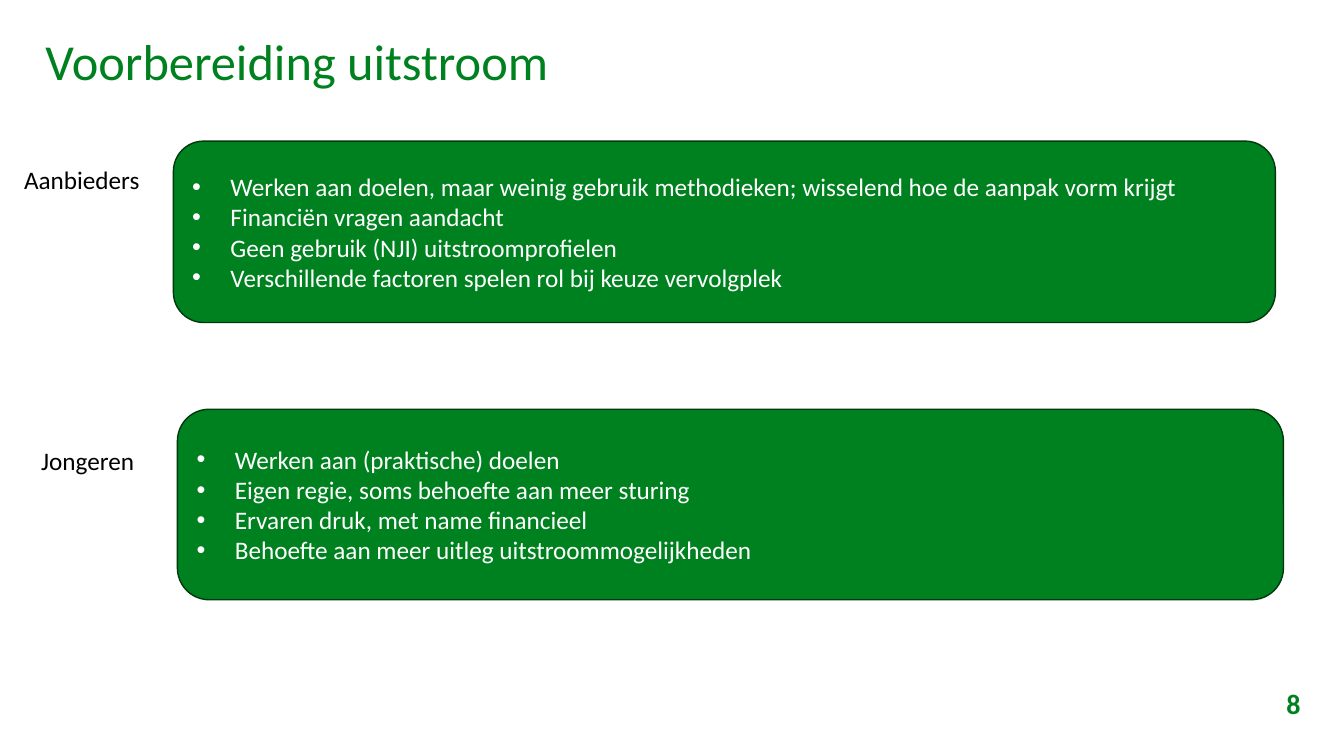
"""Build the slide on preparing young people for leaving care."""
from dataclasses import dataclass

from lxml.etree import SubElement
from pptx import Presentation
from pptx.dml.color import RGBColor
from pptx.enum.shapes import MSO_SHAPE
from pptx.enum.text import MSO_ANCHOR as Anchor, PP_ALIGN as Align
from pptx.oxml.ns import qn
from pptx.slide import Slide
from pptx.text.text import TextFrame, _Paragraph as Paragraph
from pptx.util import Inches, Pt


@dataclass(frozen=True)
class Theme:
    """Colours, font and type sizes of the slide."""
    font: str = "Calibri"
    green: RGBColor = RGBColor(0x00, 0x81, 0x1F)
    outline: RGBColor = RGBColor(0x00, 0x39, 0x0E)
    white: RGBColor = RGBColor(0xFF, 0xFF, 0xFF)
    black: RGBColor = RGBColor(0x00, 0x00, 0x00)
    title_size: int = 36
    number_size: int = 20
    body_size: int = 18


@dataclass(frozen=True)
class Box:
    """Position and size in inches."""
    left: float
    top: float
    width: float
    height: float

    def lengths(self) -> tuple[Inches, ...]:
        """Return the four values as lengths."""
        return tuple(Inches(value) for value in
                     (self.left, self.top, self.width, self.height))


@dataclass(frozen=True)
class Group:
    """A label with its panel of bulleted findings."""
    label: str
    label_box: Box
    panel_box: Box
    findings: tuple[str, ...]


THEME = Theme()
BULLET_INDENT = 0.38
GROUPS = (
    Group("Aanbieders", Box(0.14, 1.58, 1.57, 0.4), Box(1.72, 1.4, 10.93, 1.8), (
        "Werken aan doelen, maar weinig gebruik methodieken; wisselend hoe de aanpak vorm krijgt",
        "Financiën vragen aandacht",
        "Geen gebruik (NJI) uitstroomprofielen",
        "Verschillende factoren spelen rol bij keuze vervolgplek",
    )),
    Group("Jongeren", Box(0.31, 4.37, 1.36, 0.4), Box(1.76, 4.06, 10.97, 1.89), (
        "Werken aan (praktische) doelen",
        "Eigen regie, soms behoefte aan meer sturing",
        "Ervaren druk, met name financieel",
        "Behoefte aan meer uitleg uitstroommogelijkheden",
    )),
)


def add_run(paragraph: Paragraph, text: str, size: int, color: RGBColor,
            bold: bool = False) -> None:
    """Add one formatted run to a paragraph."""
    run = paragraph.add_run()
    run.text = text
    run.font.name = THEME.font
    run.font.size = Pt(size)
    run.font.bold = bold
    run.font.color.rgb = color


def clear_margins(frame: TextFrame) -> None:
    """Remove the insets of a text frame."""
    frame.margin_left = frame.margin_right = Inches(0)
    frame.margin_top = frame.margin_bottom = Inches(0)


def add_bullet(paragraph: Paragraph) -> None:
    """Give a paragraph a bullet with a hanging indent."""
    properties = paragraph._p.get_or_add_pPr()
    properties.set("marL", str(Inches(BULLET_INDENT)))
    properties.set("indent", str(-Inches(BULLET_INDENT)))
    SubElement(properties, qn("a:buFont"), typeface="Arial")
    SubElement(properties, qn("a:buChar"), char="•")


def set_title(slide: Slide, text: str, box: Box) -> None:
    """Place and format the title placeholder."""
    title = slide.shapes.title
    title.left, title.top, title.width, title.height = box.lengths()
    frame = title.text_frame
    frame.vertical_anchor = Anchor.TOP
    clear_margins(frame)
    paragraph = frame.paragraphs[0]
    paragraph.alignment = Align.LEFT
    paragraph.line_spacing = 0.92
    add_run(paragraph, text, THEME.title_size, THEME.green)


def add_page_number(slide: Slide, text: str, box: Box) -> None:
    """Add the right-aligned page number."""
    frame = slide.shapes.add_textbox(*box.lengths()).text_frame
    frame.word_wrap = True
    frame.vertical_anchor = Anchor.MIDDLE
    clear_margins(frame)
    paragraph = frame.paragraphs[0]
    paragraph.alignment = Align.RIGHT
    add_run(paragraph, text, THEME.number_size, THEME.green, bold=True)


def add_group(slide: Slide, group: Group) -> None:
    """Draw the panel of a group and the label beside it."""
    panel = slide.shapes.add_shape(MSO_SHAPE.ROUNDED_RECTANGLE,
                                   *group.panel_box.lengths())
    panel.shadow.inherit = False
    panel.fill.solid()
    panel.fill.fore_color.rgb = THEME.green
    panel.line.color.rgb = THEME.outline
    panel.line.width = Pt(1)
    frame = panel.text_frame
    frame.word_wrap = True
    frame.vertical_anchor = Anchor.MIDDLE
    for index, finding in enumerate(group.findings):
        paragraph = frame.add_paragraph() if index else frame.paragraphs[0]
        paragraph.alignment = Align.LEFT
        add_bullet(paragraph)
        add_run(paragraph, finding, THEME.body_size, THEME.white)

    label = slide.shapes.add_textbox(*group.label_box.lengths())
    label.text_frame.word_wrap = True
    add_run(label.text_frame.paragraphs[0], group.label, THEME.body_size, THEME.black)


def main() -> None:
    """Create the presentation and save it."""
    presentation = Presentation()
    presentation.slide_width = Inches(13.33)
    presentation.slide_height = Inches(7.5)
    slide = presentation.slides.add_slide(presentation.slide_layouts[5])
    set_title(slide, "Voorbereiding uitstroom", Box(0.45, 0.36, 12.44, 0.56))
    for group in GROUPS:
        add_group(slide, group)
    add_page_number(slide, "8", Box(12.23, 6.81, 0.67, 0.34))
    presentation.save("out.pptx")


if __name__ == "__main__":
    main()
